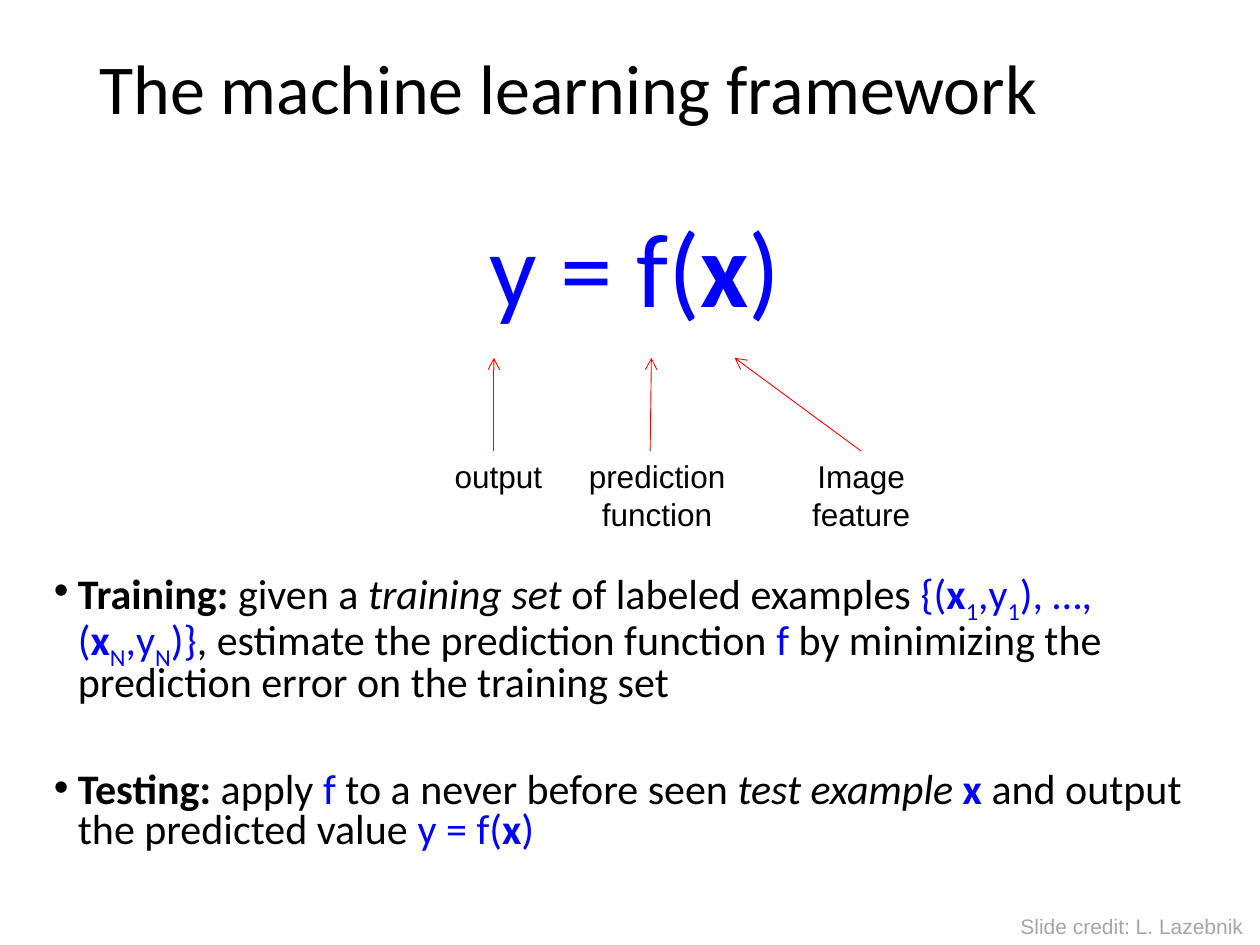
import pptx
import pptx.util
import pptx.dml.color
import pptx.enum.shapes
import pptx.enum.text
import pptx.oxml
import pptx.oxml.ns

Inches, Pt = pptx.util.Inches, pptx.util.Pt
RGBColor = pptx.dml.color.RGBColor
ALIGN = pptx.enum.text.PP_ALIGN
ANCHOR = pptx.enum.text.MSO_ANCHOR

BLACK = RGBColor(0x00, 0x00, 0x00)
BLUE = RGBColor(0x00, 0x00, 0xFF)
RED = RGBColor(0xFF, 0x00, 0x00)
GRAY = RGBColor(0xA6, 0xA6, 0xA6)

PLAIN = {}
BOLD = {"bold": True}
ITALIC = {"italic": True}
MATH = {"color": BLUE}
VECTOR = {"color": BLUE, "bold": True}
SUB = {"color": BLUE, "baseline": "-25000"}

FUNCTION = [("y = f(", MATH), ("x", VECTOR), (")", MATH)]
TRAINING = [
    ("Training: ", BOLD), ("given a ", PLAIN), ("training set ", ITALIC),
    ("of labeled examples ", PLAIN),
    ("{(", MATH), ("x", VECTOR), ("1", SUB), (",y", MATH), ("1", SUB),
    ("), …, (", MATH), ("x", VECTOR), ("N", SUB), (",y", MATH), ("N", SUB),
    (")}", MATH), (", estimate the prediction function ", PLAIN), ("f ", MATH),
    ("by minimizing the prediction error on the training set", PLAIN),
]
TESTING = [
    ("Testing:", BOLD), (" apply ", PLAIN), ("f", MATH),
    (" to a never before seen ", PLAIN), ("test example ", ITALIC),
    ("x", VECTOR), (" and output the predicted value ", PLAIN), *FUNCTION,
]


def add_box(s, box, wrap=True, anchor=ANCHOR.TOP):
    """Add an empty text box at (left, top, width, height) in inches."""
    sp = s.shapes.add_textbox(*map(Inches, box))
    sp.text_frame.word_wrap = wrap
    sp.text_frame.vertical_anchor = anchor
    return sp


def fill_paragraph(p, runs, size, font="Calibri", **layout):
    """Write (text, format) runs into a paragraph and set its layout."""
    for name, value in layout.items():
        setattr(p, name, value)
    for text, style in runs:
        r = p.add_run()
        r.text = text
        r.font.name, r.font.size = font, Pt(size)
        r.font.color.rgb = style.get("color", BLACK)
        for name in ("bold", "italic"):
            setattr(r.font, name, style.get(name, False))
        if "baseline" in style:
            r.font._element.set("baseline", style["baseline"])


def add_bullet(p):
    """Give a paragraph a hanging bullet."""
    pPr = p._p.get_or_add_pPr()
    pPr.set("marL", str(Inches(0.19)))
    pPr.set("indent", str(-Inches(0.19)))
    for tag, name, value in (("buFont", "typeface", "Arial"), ("buChar", "char", "•")):
        bullet = pptx.oxml.ns.qn("a:" + tag)
        pPr.append(pPr.makeelement(bullet, {name: value}))


def add_arrow(s, start, end, source=None):
    """Draw a thin red arrow, joined to the top of source when given."""
    line = s.shapes.add_connector(
        pptx.enum.shapes.MSO_CONNECTOR.STRAIGHT, *map(Inches, (*start, *end)))
    if source is not None:
        line.begin_connect(source, 0)
    line.line.color.rgb = RED
    line.line.width = Pt(0.5)
    ln = line.line._get_or_add_ln()
    ln.append(ln.makeelement(pptx.oxml.ns.qn("a:tailEnd"), {"type": "arrow"}))
    spPr = line._element.spPr
    spPr.append(spPr.makeelement(pptx.oxml.ns.qn("a:effectLst"), {}))


def add_title(s, box):
    """Place the slide title."""
    tf = add_box(s, box, anchor=ANCHOR.MIDDLE).text_frame
    fill_paragraph(tf.paragraphs[0], [("The machine learning framework", PLAIN)], 40,
                   line_spacing=0.9)


def add_equation(s, box):
    """Place the equation with labels and arrows below it."""
    left, top, width, _ = box
    tf = add_box(s, (left, top, width, 1.05)).text_frame
    fill_paragraph(tf.paragraphs[0], FUNCTION, 60, alignment=ALIGN.CENTER,
                   line_spacing=0.8, space_before=Pt(7.5))
    label_top, tip_top = top + 1.83, top + 1.09
    labels = [
        ("output", 3.18, 0.9, 0.4, 3.59, 3.59, False),
        ("prediction function", 3.85, 2.07, 0.71, 4.83, 4.84, True),
        ("Image feature", 5.68, 1.65, 0.71, 6.5, 5.5, True),
    ]
    for text, x, w, h, tail, tip, wrap in labels:
        sp = add_box(s, (left + x, label_top, w, h), wrap)
        fill_paragraph(sp.text_frame.paragraphs[0], [(text, PLAIN)], 18, "Arial",
                       alignment=ALIGN.CENTER if wrap else ALIGN.LEFT)
        centred = abs(x + w / 2 - tail) < 0.02
        add_arrow(s, (left + tail, label_top), (left + tip, tip_top),
                  sp if centred else None)


def add_steps(s, box):
    """Place the training and testing bullets."""
    tf = add_box(s, box).text_frame
    for i, (runs, gap) in enumerate(((TRAINING, 0), (TESTING, 38))):
        p = tf.add_paragraph() if i else tf.paragraphs[0]
        fill_paragraph(p, runs, 24, line_spacing=0.8, space_before=Pt(gap))
        add_bullet(p)


def add_credit(s, box):
    """Place the credit line."""
    tf = add_box(s, box, wrap=False).text_frame
    fill_paragraph(tf.paragraphs[0], [("Slide credit: L. Lazebnik", {"color": GRAY})],
                   12, "Arial")


def main():
    """Build and save the slide."""
    prs = pptx.Presentation()
    prs.slide_width, prs.slide_height = Inches(10), Inches(7.5)
    s = prs.slides.add_slide(prs.slide_layouts[6])
    add_title(s, (0.69, 0, 8.62, 1.45))
    add_equation(s, (0.33, 1.75, 9.42, 2.54))
    add_steps(s, (0.33, 4.5, 9.42, 2.7))
    add_credit(s, (8, 7.2, 1.98, 0.3))
    prs.save("out.pptx")


if __name__ == "__main__":
    main()
